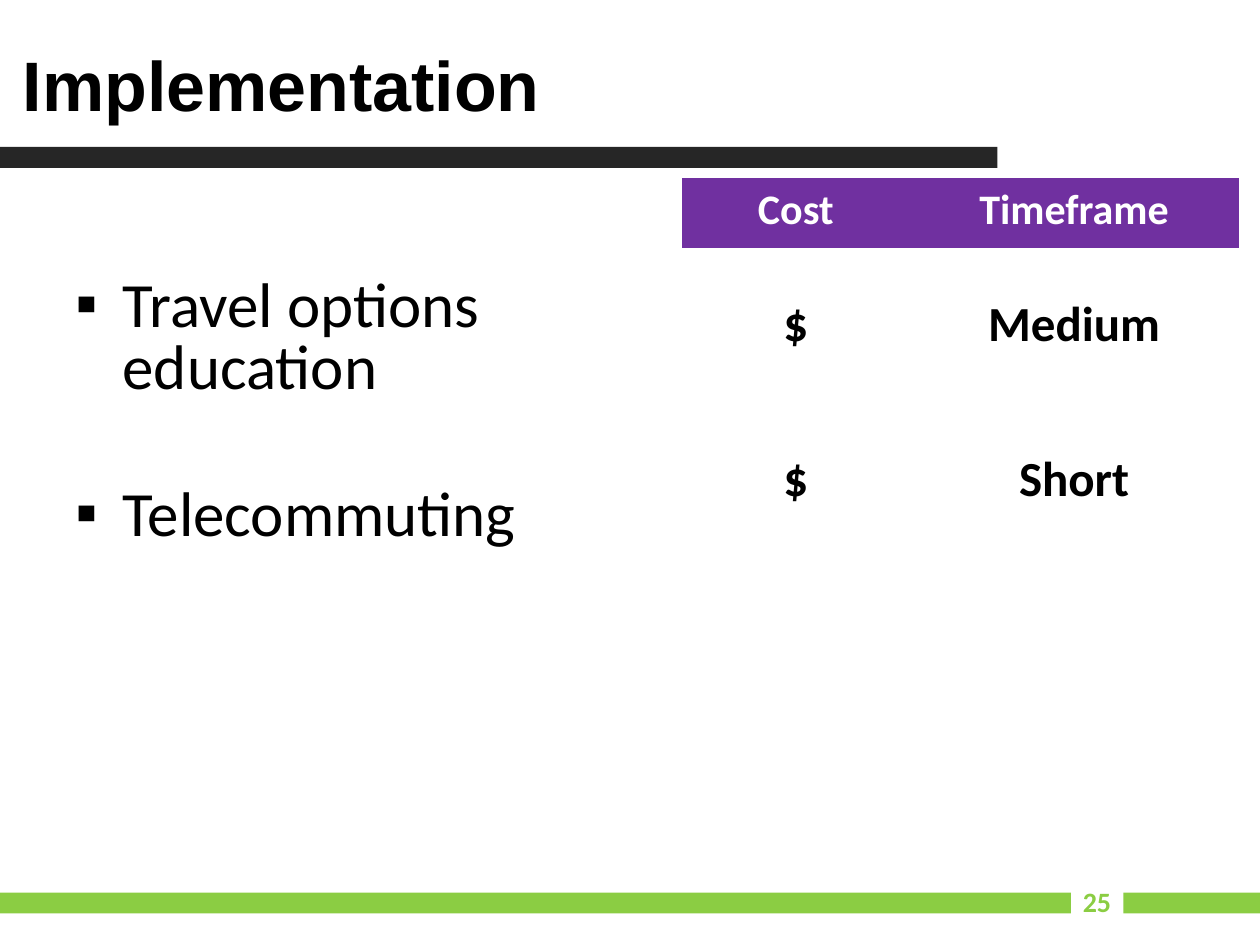
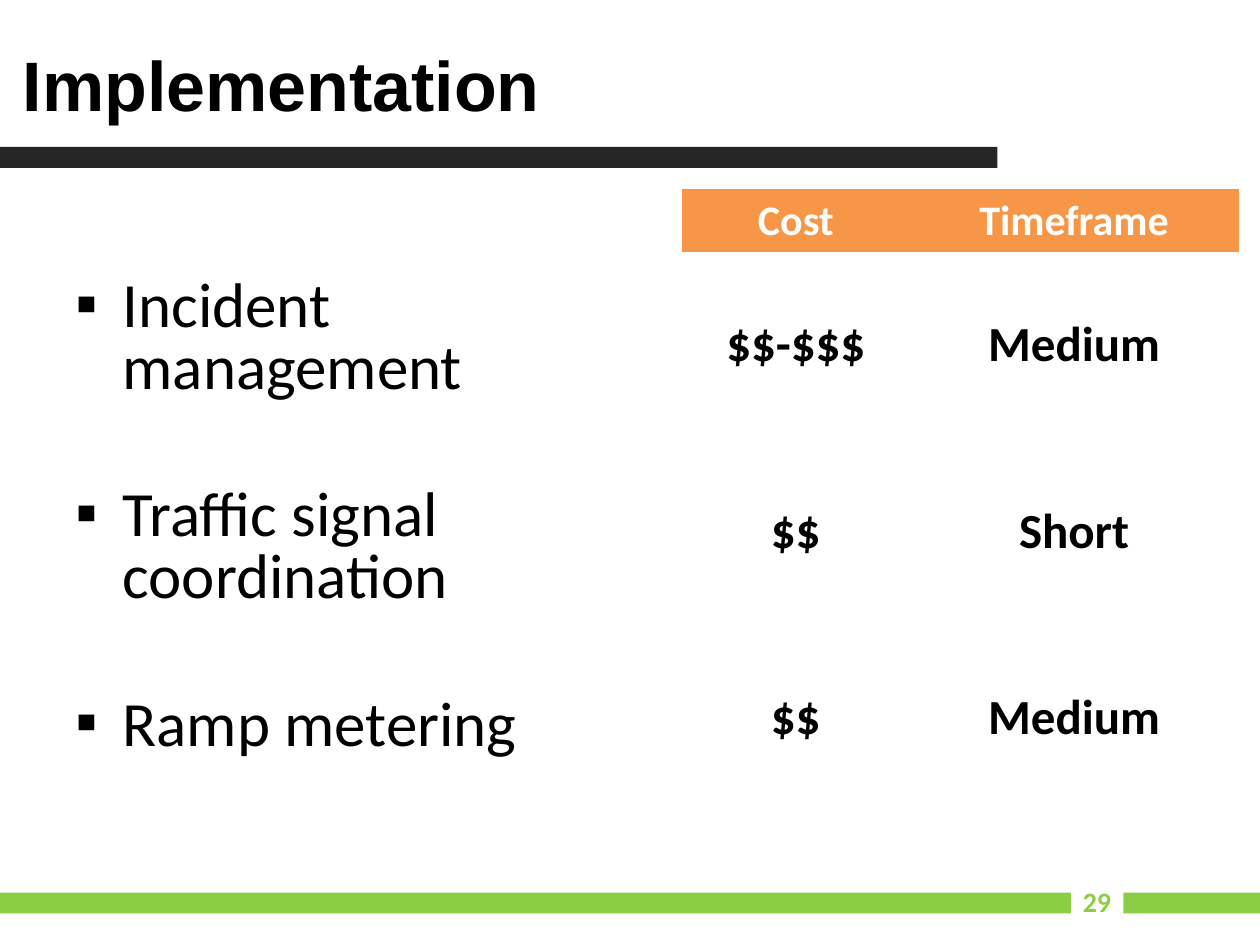
from dataclasses import dataclass

from lxml import etree
from pptx import Presentation
from pptx.dml.color import RGBColor
from pptx.enum import shapes, text
from pptx.oxml.ns import qn
from pptx.util import Pt


@dataclass(frozen=True)
class Theme:
    black: RGBColor = RGBColor(0x00, 0x00, 0x00)
    white: RGBColor = RGBColor(0xFF, 0xFF, 0xFF)
    dark: RGBColor = RGBColor(0x26, 0x26, 0x26)
    green: RGBColor = RGBColor(0x8B, 0xCD, 0x43)
    purple: RGBColor = RGBColor(0x70, 0x30, 0xA0)
    orange: RGBColor = RGBColor(0xF7, 0x96, 0x46)
    title_font: str = "Arial"
    body_font: str = "Calibri"
    title_size: int = 40
    bullet_size: int = 36
    rating_size: int = 28
    header_size: int = 24
    number_size: int = 16


theme = Theme()
plain_table_style = "{2D5ABB26-0587-4C30-8999-92F81FD0307C}"

# Shared text formats
title_format = dict(name=theme.title_font, size=Pt(theme.title_size), bold=True, color=theme.black)
number_format = dict(name=theme.body_font, size=Pt(theme.number_size), bold=True, color=theme.green)
header_format = dict(name=theme.body_font, size=Pt(theme.header_size), bold=True, color=theme.white)
rating_format = dict(name=theme.body_font, size=Pt(theme.rating_size), bold=True, color=theme.black)
bullet_format = dict(name=theme.body_font, size=Pt(theme.bullet_size), bold=False, color=theme.black)

# Shared bands: left, top, width, height, colour
bands = [
    (0, 84, 570, 12, theme.dark),
    (0, 510, 612, 12, theme.green),
    (642, 510, 78, 12, theme.green),
]

# What differs between the slides
slide_contents = [
    dict(number="25", header_color=theme.purple, table_top=102, header_height=39.5, row_height=88.5,
         measures=[("Travel options education", "$", "Medium"),
                   ("Telecommuting", "$", "Short")]),
    dict(number="29", header_color=theme.orange, table_top=108, header_height=36, row_height=106.5,
         measures=[("Incident management", "$$-$$$", "Medium"),
                   ("Traffic signal coordination", "$$", "Short"),
                   ("Ramp metering", "$$", "Medium")]),
]


def write(paragraph, words, font_format, alignment=text.PP_ALIGN.LEFT):
    paragraph.alignment = alignment
    font = paragraph.add_run().font
    paragraph.runs[0].text = words
    for name, value in font_format.items():
        if name == "color":
            font.color.rgb = value
        else:
            setattr(font, name, value)


def add_text_frame(slide, left, top, width, height, anchor):
    box = slide.shapes.add_textbox(Pt(left), Pt(top), Pt(width), Pt(height))
    frame = box.text_frame
    frame.word_wrap = True
    frame.vertical_anchor = anchor
    return frame


presentation = Presentation()
presentation.slide_width, presentation.slide_height = Pt(720), Pt(540)

for content in slide_contents:
    slide = presentation.slides.add_slide(presentation.slide_layouts[6])

    # Bands
    for left, top, width, height, color in bands:
        band = slide.shapes.add_shape(
            shapes.MSO_SHAPE.RECTANGLE, Pt(left), Pt(top), Pt(width), Pt(height))
        band.shadow.inherit = False
        band.fill.solid()
        band.fill.fore_color.rgb = color
        band.line.fill.background()

    # Title and slide number
    frame = add_text_frame(slide, 6, 12, 648, 72, text.MSO_ANCHOR.MIDDLE)
    write(frame.paragraphs[0], "Implementation", title_format)
    frame = add_text_frame(slide, 600, 500.5, 42, 29, text.MSO_ANCHOR.MIDDLE)
    write(frame.paragraphs[0], content["number"], number_format, text.PP_ALIGN.RIGHT)

    # Cost and timeframe table
    measures = content["measures"]
    heights = [content["header_height"]] + [content["row_height"]] * len(measures)
    graphic = slide.shapes.add_table(
        len(heights), 2, Pt(390), Pt(content["table_top"]), Pt(318), Pt(sum(heights)))
    table = graphic.table
    table.first_row = table.horz_banding = False
    table._tbl.tblPr.find(qn("a:tableStyleId")).text = plain_table_style
    for column, width in zip(table.columns, (129.5, 188.5)):
        column.width = Pt(width)
    for row, height in zip(table.rows, heights):
        row.height = Pt(height)
    rows = [("Cost", "Timeframe")] + [measure[1:] for measure in measures]
    for row_index, row in enumerate(rows):
        for column_index, words in enumerate(row):
            cell = table.cell(row_index, column_index)
            if row_index == 0:
                cell.fill.solid()
                cell.fill.fore_color.rgb = content["header_color"]
                cell.vertical_anchor = text.MSO_ANCHOR.TOP
            else:
                cell.fill.background()
                cell.vertical_anchor = text.MSO_ANCHOR.MIDDLE
            write(cell.text_frame.paragraphs[0], words,
                  rating_format if row_index else header_format, text.PP_ALIGN.CENTER)

    # Bulleted measures
    frame = add_text_frame(slide, 36, 156, 354, 354, text.MSO_ANCHOR.TOP)
    for index, (measure, _, _) in enumerate(measures):
        paragraph = frame.add_paragraph() if index else frame.paragraphs[0]
        properties = paragraph._p.get_or_add_pPr()
        properties.set("marL", str(Pt(27)))
        properties.set("indent", str(-Pt(27)))
        etree.SubElement(properties, qn("a:buFont"), typeface=theme.title_font)
        etree.SubElement(properties, qn("a:buChar"), char="▪")
        paragraph.line_spacing = Pt(35)
        if index:
            paragraph.space_before = Pt(49.5)
        write(paragraph, measure, bullet_format)

presentation.save("out.pptx")
